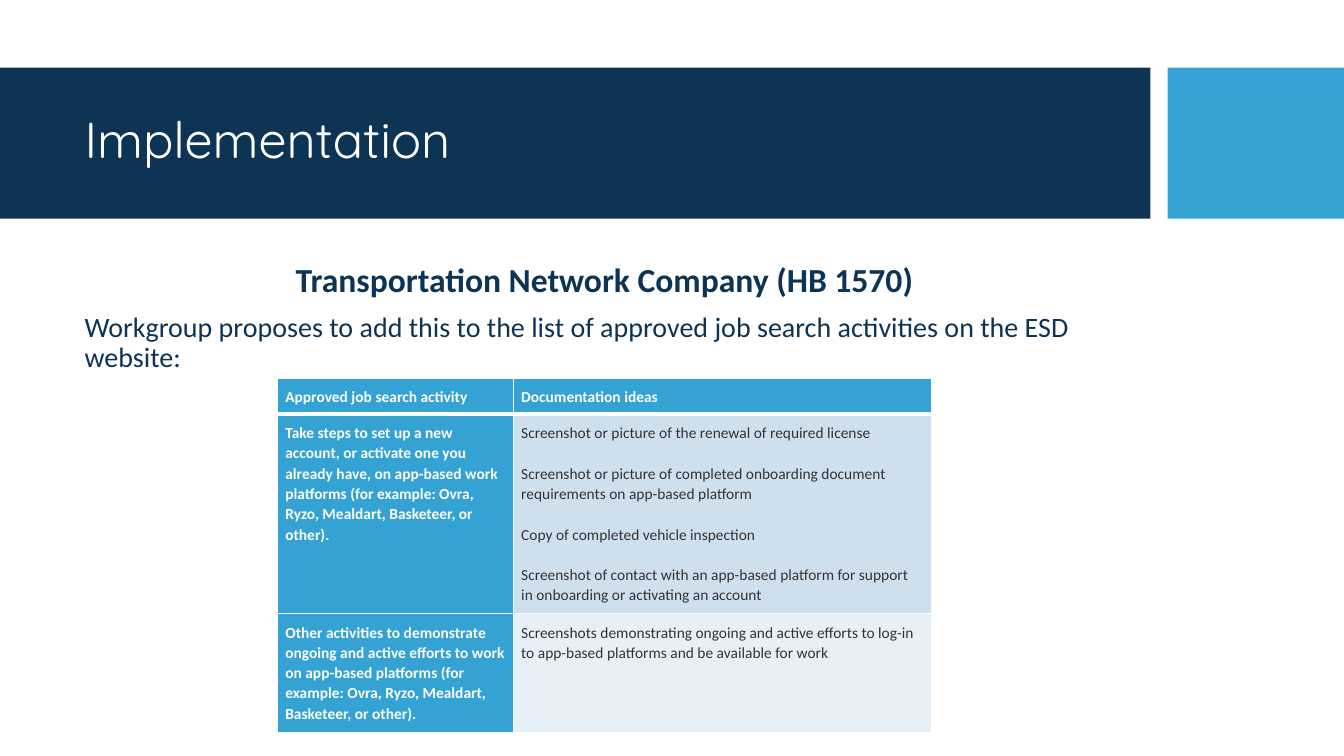
from lxml import etree
from pptx import Presentation
from pptx.dml.color import RGBColor
from pptx.enum.shapes import MSO_SHAPE
from pptx.enum.text import MSO_ANCHOR, PP_ALIGN
from pptx.oxml.ns import qn
from pptx.util import Inches, Pt

RECT = MSO_SHAPE.RECTANGLE
TOP, MIDDLE, BOTTOM = MSO_ANCHOR.TOP, MSO_ANCHOR.MIDDLE, MSO_ANCHOR.BOTTOM
LEFT, CENTER = PP_ALIGN.LEFT, PP_ALIGN.CENTER

COLORS = {
    "navy": "0D3455",
    "blue": "34A2D2",
    "pale": "CEE0EE",
    "mist": "E8F0F7",
    "gray": "333333",
    "white": "FFFFFF",
}

WIDTHS = [2.34, 4.15]
HEIGHTS = [0.36, 1.98, 1.18]
APPS = "(for example: Ovra, Ryzo, Mealdart, Basketeer, or other)."
ROWS = [
    (["Approved job search activity"], ["Documentation ideas"]),
    (
        ["Take steps to set up a new account, or activate one you already have, "
         f"on app-based work platforms {APPS}"],
        ["Screenshot or picture of the renewal of required license",
         "Screenshot or picture of completed onboarding document requirements "
         "on app-based platform",
         "Copy of completed vehicle inspection",
         "Screenshot of contact with an app-based platform for support in "
         "onboarding or activating an account"],
    ),
    (
        ["Other activities to demonstrate ongoing and active efforts to work on "
         f"app-based platforms {APPS}"],
        ["Screenshots demonstrating ongoing and active efforts to log-in to "
         "app-based platforms and be available for work"],
    ),
]


def color(name):
    return RGBColor.from_string(COLORS[name])


def write(frame, text, size=11, font="Calibri", fill="navy", bold=False,
          align=LEFT, line=0.9, before=0):
    """Fill the empty first paragraph, or add a new one."""
    para = frame.paragraphs[0]
    if para.runs:
        para = frame.add_paragraph()
        para.space_before = Pt(before)
    para.alignment = align
    para.line_spacing = line
    run = para.add_run()
    run.text = text
    run.font.size = Pt(size)
    run.font.name = font
    run.font.bold = bold
    run.font.color.rgb = color(fill)


def add_bar(slide, left, width, fill):
    bar = slide.shapes.add_shape(
        RECT, Inches(left), Inches(0.67), Inches(width), Inches(1.5))
    bar.shadow.inherit = False
    bar.fill.solid()
    bar.fill.fore_color.rgb = color(fill)
    bar.line.fill.background()


def add_box(slide, top, height, anchor):
    box = slide.shapes.add_textbox(
        Inches(0.74), Inches(top), Inches(10.51), Inches(height))
    frame = box.text_frame
    frame.word_wrap = True
    frame.vertical_anchor = anchor
    return frame


def add_edges(cell, **widths):
    """Draw white cell borders, widths in points by side."""
    props = cell._tc.get_or_add_tcPr()
    for side in "LRTB":
        edge = etree.SubElement(
            props, qn(f"a:ln{side}"), w=str(Pt(widths.get(side, 1))))
        solid = etree.SubElement(edge, qn("a:solidFill"))
        etree.SubElement(solid, qn("a:srgbClr"), val=COLORS["white"])


def fill_cell(cell, lines, row, col):
    head = row == 0
    label = head or col == 0
    cell.margin_left = cell.margin_right = Inches(0.08)
    cell.margin_top = cell.margin_bottom = Inches(0.08)
    cell.vertical_anchor = BOTTOM if head else TOP
    add_edges(cell, T=3 if row == 1 else 1, B=3 if head else 1)
    cell.fill.solid()
    shade = "blue" if label else ("pale" if row == 1 else "mist")
    cell.fill.fore_color.rgb = color(shade)
    for text in lines:
        write(cell.text_frame, text, fill="white" if label else "gray",
              bold=label, line=1.07, before=14.5)


def add_grid(slide):
    shape = slide.shapes.add_table(
        len(ROWS), len(WIDTHS), Inches(2.75), Inches(3.75),
        Inches(sum(WIDTHS)), Inches(sum(HEIGHTS)))
    table = shape.table
    table.first_row = table.horz_banding = False
    for col, width in enumerate(WIDTHS):
        table.columns[col].width = Inches(width)
    for row, cells in enumerate(ROWS):
        table.rows[row].height = Inches(HEIGHTS[row])
        for col, lines in enumerate(cells):
            fill_cell(table.cell(row, col), lines, row, col)


def main():
    deck = Presentation()
    deck.slide_width, deck.slide_height = Inches(13.33), Inches(7.5)
    slide = deck.slides.add_slide(deck.slide_layouts[6])

    # Title band
    add_bar(slide, 0, 11.41, "navy")
    add_bar(slide, 11.58, 1.75, "blue")
    title = add_box(slide, 0.82, 1.18, MIDDLE)
    write(title, "Implementation", size=36, font="Quicksand", fill="white")

    # Introduction
    intro = add_box(slide, 2.56, 3.94, TOP)
    write(intro, "Transportation Network Company (HB 1570)", size=24,
          bold=True, align=CENTER)
    write(intro, "Workgroup proposes to add this to the list of approved job "
          "search activities on the ESD website:", size=20, before=10)

    # Activities and their documentation
    add_grid(slide)
    deck.save("out.pptx")


if __name__ == "__main__":
    main()
